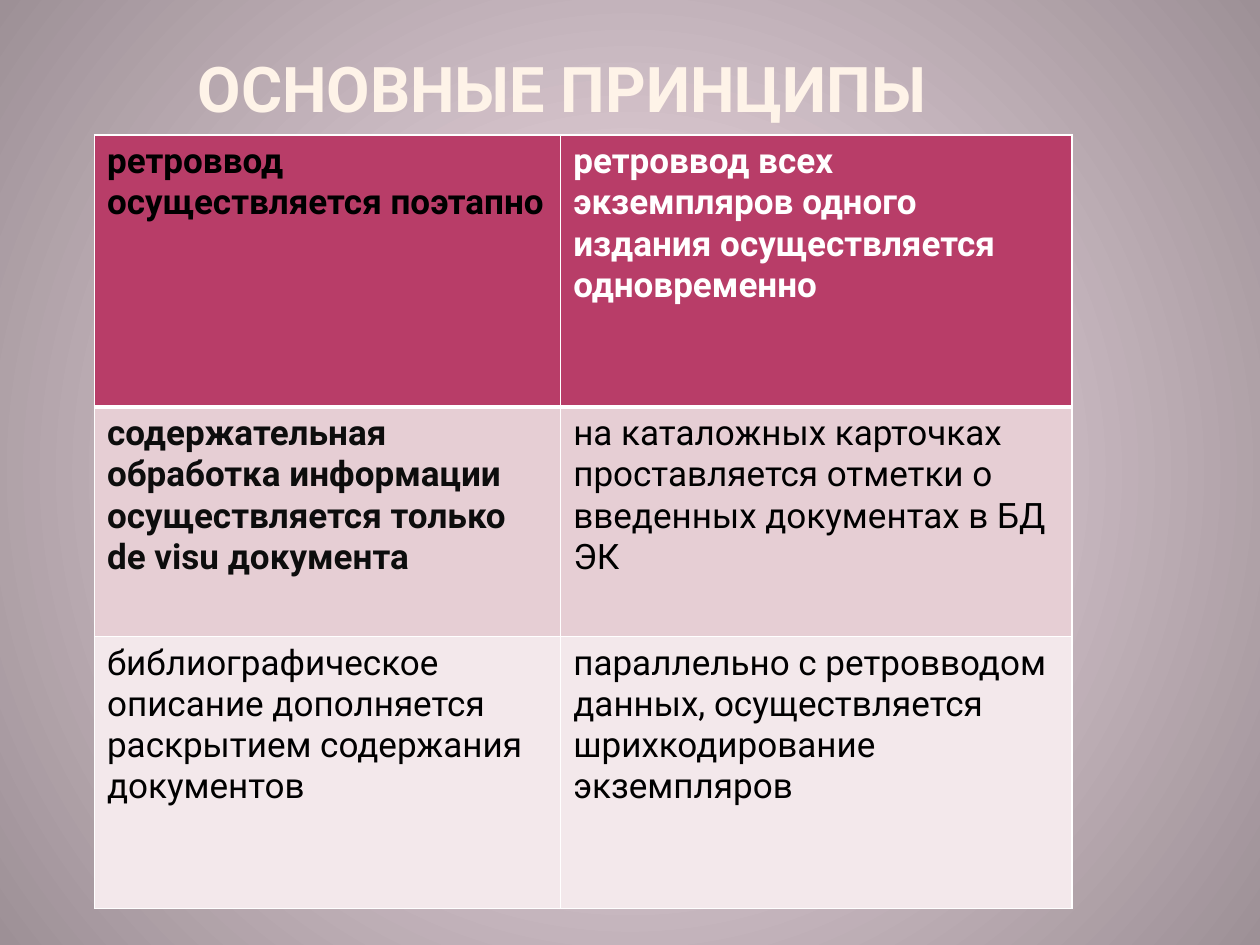
from lxml.etree import SubElement
from pptx import Presentation
from pptx.dml.color import RGBColor
from pptx.enum.text import MSO_ANCHOR, MSO_AUTO_SIZE, PP_ALIGN
from pptx.oxml import parse_xml
from pptx.oxml.ns import nsdecls, qn
from pptx.util import Inches, Pt

FONT = "Roboto"
COLUMNS = [3.7, 4.06]
ROWS = [2.16, 1.82, 2.16]
ROW_FILLS = ["B83D68", "E6CED4", "F3E8EB"]
# Each cell: text, colour, bold
PRINCIPLES = [
    [("ретроввод осуществляется поэтапно", "000000", True),
     ("ретроввод всех экземпляров одного издания осуществляется одновременно",
      "FFFFFF", True)],
    [("содержательная обработка информации осуществляется только de visu документа",
      "0D0D0D", True),
     ("на каталожных карточках проставляется отметки о введенных документах в БД ЭК",
      "000000", False)],
    [("библиографическое описание дополняется раскрытием содержания документов",
      "000000", False),
     ("параллельно с ретровводом данных, осуществляется шрихкодирование экземпляров",
      "000000", False)],
]


def style_font(font, size, color, bold):
    font.name, font.size, font.bold = FONT, Pt(size), bold
    font.color.rgb = RGBColor.from_string(color)


def add_borders(cell, widths):
    """Draw white cell borders; widths are points for left, right, top, bottom."""
    properties = cell._tc.get_or_add_tcPr()
    for index, (side, width) in enumerate(zip("LRTB", widths)):
        properties.insert(index, parse_xml(
            f'<a:ln{side} {nsdecls("a")} w="{Pt(width)}"><a:solidFill>'
            f'<a:srgbClr val="FFFFFF"/></a:solidFill></a:ln{side}>'))


deck = Presentation()
deck.slide_width, deck.slide_height = Inches(10), Inches(7.5)
page = deck.slides.add_slide(deck.slide_layouts[5])

# Background: light centre, darker rim
background = page.background.fill
background.gradient()
for stop, position, color in zip(background.gradient_stops, (0, 1), ("FCE7F1", "9D9096")):
    stop.position = position
    stop.color.rgb = RGBColor.from_string(color)
gradient = page._element.find(f".//{qn('a:gradFill')}")
gradient.remove(gradient.find(qn("a:lin")))
circle = SubElement(gradient, qn("a:path"), {"path": "circle"})
SubElement(circle, qn("a:fillToRect"), {side: "50000" for side in "ltrb"})

# Title
title = page.shapes.title
title.left, title.top, title.width, title.height = map(Inches, (0.5, 0, 7.92, 0.99))
frame = title.text_frame
frame.text = "ОСНОВНЫЕ ПРИНЦИПЫ"
frame.auto_size = MSO_AUTO_SIZE.NONE
frame.vertical_anchor = MSO_ANCHOR.BOTTOM
frame.margin_left = frame.margin_right = Inches(0.05)
frame.margin_top = frame.margin_bottom = 0
frame.paragraphs[0].alignment = PP_ALIGN.CENTER
style_font(frame.paragraphs[0].font, 36, "FEF3E8", True)

# Table of principles
table = page.shapes.add_table(
    len(ROWS), len(COLUMNS), Inches(0.75), Inches(1.07),
    Inches(sum(COLUMNS)), Inches(sum(ROWS))).table
for column, width in zip(table.columns, COLUMNS):
    column.width = Inches(width)
for r, (height, fill, principles) in enumerate(zip(ROWS, ROW_FILLS, PRINCIPLES)):
    table.rows[r].height = Inches(height)
    top, bottom = (3 if r == 1 else 1), (3 if r == 0 else 1)
    for c, (text, color, bold) in enumerate(principles):
        cell = table.cell(r, c)
        cell.text = text
        cell.fill.solid()
        cell.fill.fore_color.rgb = RGBColor.from_string(fill)
        style_font(cell.text_frame.paragraphs[0].font, 20, color, bold)
        add_borders(cell, (1, 1, top, bottom))

deck.save("out.pptx")
